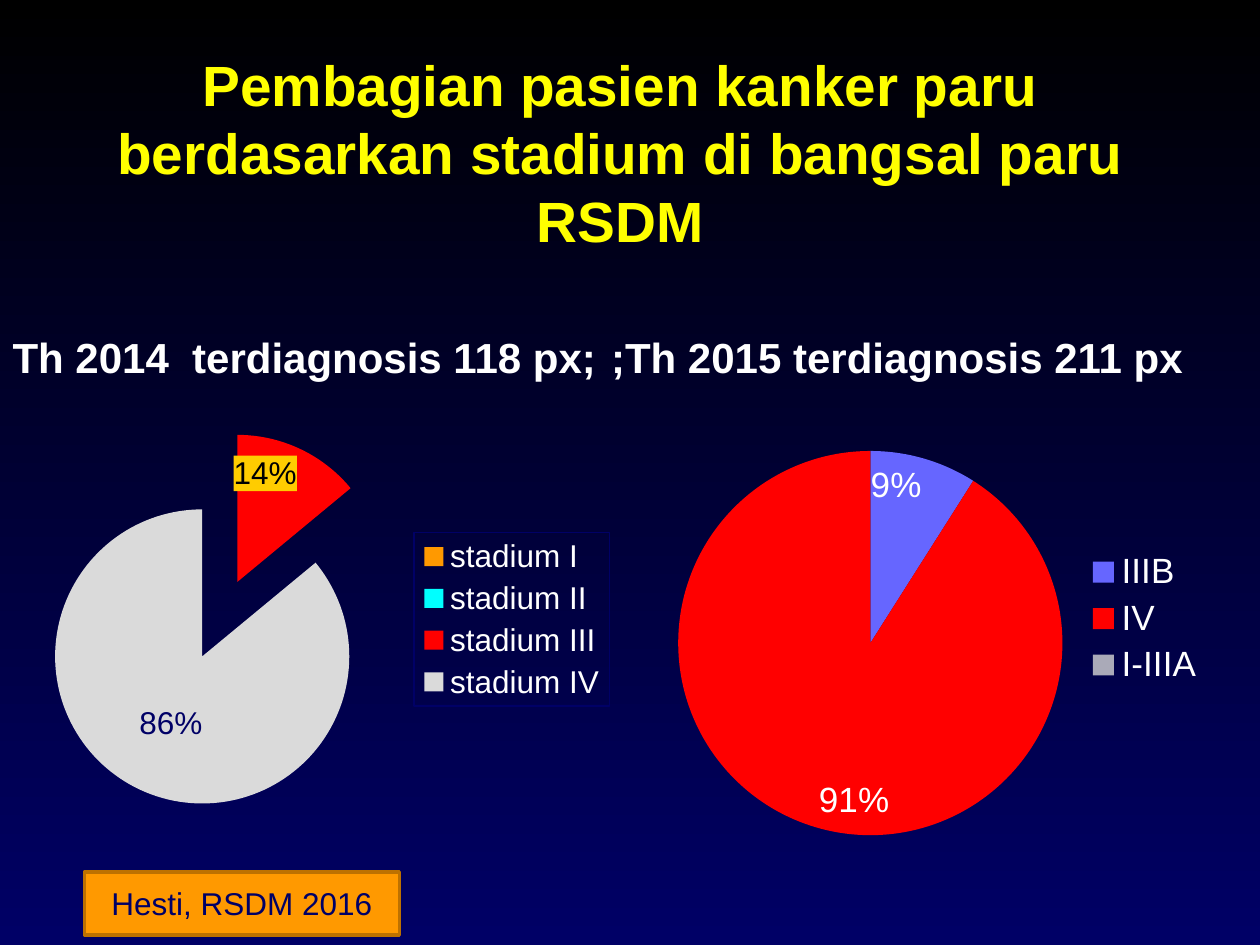
from lxml import etree
from pptx import Presentation
from pptx import util as u
from pptx.chart.data import ChartData
from pptx.dml.color import RGBColor
from pptx.enum import chart as ch, shapes, text
from pptx.oxml import parse_xml
from pptx.oxml.ns import nsdecls, qn

WIDTH, HEIGHT = 10, 7.5
FONT = "Arial"
COLORS = {
    "black": "000000", "navy": "000066", "yellow": "FFFF00", "white": "FFFFFF",
    "gold": "FFCC00", "orange": "FF9900", "brown": "BD7100", "cyan": "00FFFF",
    "red": "FF0000", "silver": "DADADA", "blue": "6666FF", "gray": "AAAAB8",
}

TITLE = "Pembagian pasien kanker paru berdasarkan stadium di bangsal paru RSDM"
SOURCE = "Hesti, RSDM 2016"
# Boxes are left, top, width, height in inches; plot boxes are shares of the chart.
HEADINGS = [
    (1, "Th 2014  terdiagnosis 118 px;", (0, 1.68, 4.92, 1.4)),
    (3, ";Th 2015 terdiagnosis 211 px", (4.75, 1.68, 5.08, 1.4)),
]
INSIDE_END, CENTER = ch.XL_LABEL_POSITION.INSIDE_END, ch.XL_LABEL_POSITION.CENTER
PIES = [
    {
        "box": (0.25, 2.75, 4.67, 4.33), "plot": (0, 0, 0.64, 1), "size": 18,
        "slices": [("stadium I", 0, "orange"), ("stadium II", 0, "cyan"),
                   ("stadium III", 0.14, "red"), ("stadium IV", 0.86, "silver")],
        "format": "0%", "show": "showVal", "explosion": 28, "legend_line": "navy",
        # slice number, text colour, position, label fill
        "labels": [(2, "black", INSIDE_END, "gold"), (3, "navy", CENTER, None)],
    },
    {
        "box": (5.25, 2.75, 4.42, 4.32), "plot": (0.03, 0.19, 0.69, 0.71), "size": 20,
        "slices": [("IIIB", 9, "blue"), ("IV", 91, "red"), ("I-IIIA", 0, "gray")],
        "format": "General", "show": "showPercent", "explosion": 0, "legend_line": None,
        "labels": [(0, "white", INSIDE_END, None), (1, "white", INSIDE_END, None)],
    },
]


def rgb(name):
    return RGBColor.from_string(COLORS[name])


def inches(box):
    return [u.Inches(length) for length in box]


def style(font, size, color, bold=False):
    font.name, font.size, font.bold = FONT, u.Pt(size), bold
    font.color.rgb = rgb(color)


def fill_placeholder(holder, words, box, size, color):
    holder.left, holder.top, holder.width, holder.height = inches(box)
    frame = holder.text_frame
    frame.text = words
    frame.auto_size = text.MSO_AUTO_SIZE.NONE
    style(frame.paragraphs[0].font, size, color, bold=True)


def solid_box(color, outline=False):
    paint = f'<a:solidFill><a:srgbClr val="{COLORS[color]}"/></a:solidFill>'
    inner = f'<a:ln w="9525">{paint}</a:ln>' if outline else paint
    return parse_xml(f'<c:spPr {nsdecls("c", "a")}>{inner}</c:spPr>')


def place_plot(chart, plot):
    """Fix the inner plot area at the given shares of the chart."""
    area = chart.element.find(".//" + qn("c:plotArea"))
    for old in area.findall(qn("c:layout")):
        area.remove(old)
    layout = etree.Element(qn("c:layout"))
    manual = etree.SubElement(layout, qn("c:manualLayout"))
    settings = [("layoutTarget", "inner"), ("xMode", "edge"), ("yMode", "edge")]
    settings += zip("xywh", map(str, plot))
    for tag, value in settings:
        etree.SubElement(manual, qn(f"c:{tag}")).set("val", value)
    area.insert(0, layout)


def label_slice(series, pie, number, color, position, fill):
    label = series.points[number].data_label
    style(label.font, pie["size"], color)
    label.position = position
    node = next(n for n in series._element.iter(qn("c:dLbl"))
                if n.find(qn("c:idx")).get("val") == str(number))
    for tag in ("showVal", "showPercent"):
        node.find(qn(f"c:{tag}")).set("val", str(int(tag == pie["show"])))
    if fill:
        node.find(qn("c:txPr")).addprevious(solid_box(fill))


def add_pie(slide, pie):
    names, values, colors = zip(*pie["slices"])
    data = ChartData(number_format=pie["format"])
    data.categories = names
    data.add_series("Series 1", values)
    chart = slide.shapes.add_chart(ch.XL_CHART_TYPE.PIE, *inches(pie["box"]), data).chart
    style(chart.font, 18, "white")
    chart.has_title = False
    chart.has_legend = True
    legend = chart.legend
    legend.position = ch.XL_LEGEND_POSITION.RIGHT
    legend.include_in_layout = False
    style(legend.font, pie["size"], "white")
    if pie["legend_line"]:
        legend._element.find(qn("c:txPr")).addprevious(
            solid_box(pie["legend_line"], outline=True))
    place_plot(chart, pie["plot"])

    chart.plots[0].vary_by_categories = True
    series = chart.plots[0].series[0]
    for number, color in enumerate(colors):
        slice_fill = series.points[number].format.fill
        slice_fill.solid()
        slice_fill.fore_color.rgb = rgb(color)
    if pie["explosion"]:
        explosion = etree.Element(qn("c:explosion"), val=str(pie["explosion"]))
        series._element.find(qn("c:dPt")).addprevious(explosion)
    series.data_labels.show_value = False
    for label in pie["labels"]:
        label_slice(series, pie, *label)


def add_source(slide):
    badge = slide.shapes.add_shape(
        shapes.MSO_SHAPE.RECTANGLE, *inches((0.67, 6.92, 2.5, 0.5)))
    badge.shadow.inherit = False
    badge.fill.solid()
    badge.fill.fore_color.rgb = rgb("orange")
    badge.line.color.rgb = rgb("brown")
    badge.line.width = u.Pt(2)
    badge.text_frame.text = SOURCE
    paragraph = badge.text_frame.paragraphs[0]
    paragraph.alignment = text.PP_ALIGN.CENTER
    style(paragraph.font, 18, "navy")


def main():
    deck = Presentation()
    deck.slide_width, deck.slide_height = inches((WIDTH, HEIGHT))
    slide = deck.slides.add_slide(deck.slide_layouts.get_by_name("Comparison"))
    background = slide.background.fill
    background.gradient()
    background.gradient_angle = 270
    for stop, color in zip(background.gradient_stops, ("black", "navy")):
        stop.color.rgb = rgb(color)

    holders = {h.placeholder_format.idx: h for h in slide.placeholders}
    fill_placeholder(holders[0], TITLE, (0.42, 0.58, 9, 1.25), 32.4, "yellow")
    for idx, words, box in HEADINGS:
        fill_placeholder(holders[idx], words, box, 24, "white")
        content = holders[idx + 1].element
        content.getparent().remove(content)
    for pie in PIES:
        add_pie(slide, pie)
    add_source(slide)
    deck.save("out.pptx")


if __name__ == "__main__":
    main()
